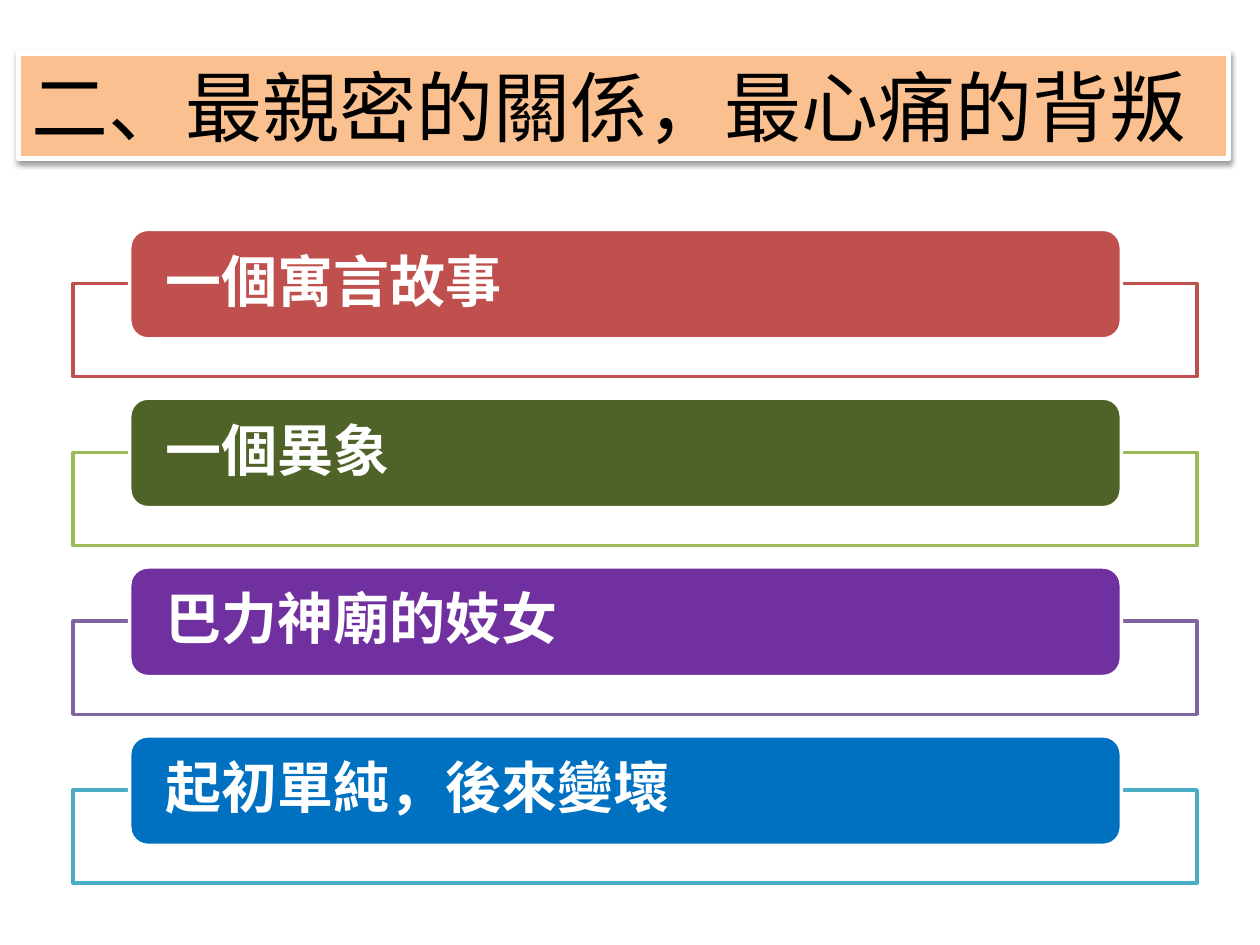
from lxml import etree
from pptx import Presentation
from pptx import util as u
from pptx.dml.color import RGBColor
from pptx.enum import shapes, text
from pptx.oxml import ns

FONT = "Noto Sans CJK TC"
TITLE = "二、最親密的關係，最心痛的背叛"
# Wording, bar fill, frame line
ITEMS = [
    ("一個寓言故事", "C0504D", "C0504D"),
    ("一個異象", "4F6228", "9BBB59"),
    ("巴力神廟的妓女", "7030A0", "8064A2"),
    ("起初單純，後來變壞", "0070C0", "4BACC6"),
]
TITLE_BOX = (10.8, 30.24, 691.2, 60.48)
FRAME_LEFT, FRAME_WIDTH, FRAME_HEIGHT = 41.76, 642.24, 53.28
BAR_LEFT, BAR_WIDTH, BAR_HEIGHT = 74.16, 566.64, 62.64
FIRST_BAR_TOP, FRAME_DROP, ROW_PITCH = 131.04, 30.96, 96.48


def color(value):
    return RGBColor.from_string(value)


def add_box(slide, kind, place, fill, line, width):
    box = slide.shapes.add_shape(kind, *(u.Pt(length) for length in place))
    box.shadow.inherit = False
    box.fill.solid()
    box.fill.fore_color.rgb = color(fill)
    box.line.color.rgb = color(line)
    box.line.width = u.Pt(width)
    return box


def add_text(box, words, size, ink, bold=False):
    box.text_frame.vertical_anchor = text.MSO_ANCHOR.MIDDLE
    para = box.text_frame.paragraphs[0]
    para.alignment = text.PP_ALIGN.LEFT
    span = para.add_run()
    span.text = words
    span.font.size = u.Pt(size)
    span.font.bold = bold
    span.font.name = FONT
    span.font.color.rgb = color(ink)
    # East Asian glyphs take their font from a:ea
    east = etree.SubElement(span.font._element, ns.qn("a:ea"))
    east.set("typeface", FONT)
    return para


def add_shadow(box):
    effects = box._element.spPr.find(ns.qn("a:effectLst"))
    shadow = etree.SubElement(
        effects, ns.qn("a:outerShdw"), blurRad=str(u.Pt(3.1)),
        dist=str(u.Pt(1.6)), dir="5400000", rotWithShape="0")
    ink = etree.SubElement(shadow, ns.qn("a:srgbClr"), val="000000")
    etree.SubElement(ink, ns.qn("a:alpha"), val="38000")


def set_opacity(box, percent):
    ink = box._element.spPr.find(ns.qn("a:solidFill"))[0]
    etree.SubElement(ink, ns.qn("a:alpha"), val=str(percent * 1000))


def add_title(slide):
    box = add_box(slide, shapes.MSO_SHAPE.RECTANGLE, TITLE_BOX,
                  "FAC090", "FFFFFF", 3)
    add_shadow(box)
    add_text(box, TITLE, 44, "000000")
    box.text_frame.word_wrap = False
    box.text_frame.auto_size = text.MSO_AUTO_SIZE.SHAPE_TO_FIT_TEXT


def add_item(slide, top, words, fill, line):
    # Open frame behind the bar
    frame = add_box(
        slide, shapes.MSO_SHAPE.RECTANGLE,
        (FRAME_LEFT, top + FRAME_DROP, FRAME_WIDTH, FRAME_HEIGHT),
        "FFFFFF", line, 2)
    set_opacity(frame, 90)

    # Bar with its heading
    bar = add_box(
        slide, shapes.MSO_SHAPE.ROUNDED_RECTANGLE,
        (BAR_LEFT, top, BAR_WIDTH, BAR_HEIGHT), fill, "FFFFFF", 2)
    body = bar.text_frame
    body.word_wrap = True
    body.margin_left = body.margin_right = u.Pt(17.28)
    body.margin_top = body.margin_bottom = 0
    para = add_text(bar, words, 32, "FFFFFF", bold=True)
    para.line_spacing = 0.9


def main():
    deck = Presentation()
    deck.slide_width, deck.slide_height = u.Pt(720), u.Pt(540)
    slide = deck.slides.add_slide(deck.slide_layouts[6])
    add_title(slide)
    for row, item in enumerate(ITEMS):
        add_item(slide, FIRST_BAR_TOP + row * ROW_PITCH, *item)
    deck.save("out.pptx")


if __name__ == "__main__":
    main()
